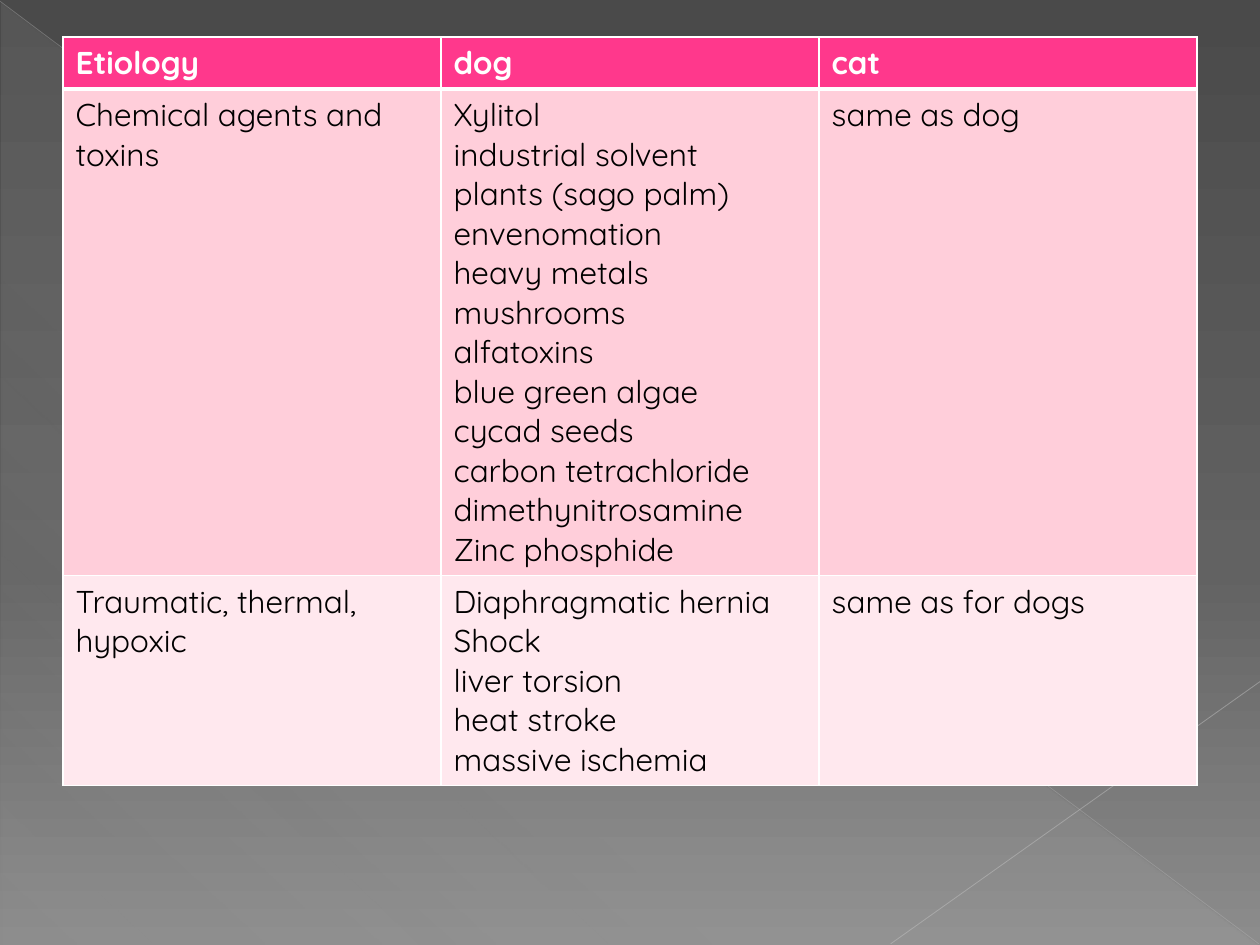
from lxml import etree
from pptx import Presentation
from pptx.dml.color import RGBColor
from pptx.enum.shapes import MSO_CONNECTOR, MSO_SHAPE
from pptx.oxml.ns import qn
from pptx.util import Pt

RIGHT_TRIANGLE = MSO_SHAPE.RIGHT_TRIANGLE
STRAIGHT = MSO_CONNECTOR.STRAIGHT

# Content: each cell is a list of paragraphs
ETIOLOGIES = [
    [["Etiology"], ["dog"], ["cat"]],
    [
        ["Chemical agents and toxins"],
        ["Xylitol", "industrial solvent", "plants (sago palm)", "envenomation",
         "heavy metals", "mushrooms", "alfatoxins", "blue green algae",
         "cycad seeds", "carbon tetrachloride", "dimethynitrosamine",
         "Zinc phosphide"],
        ["same as dog"],
    ],
    [
        ["Traumatic, thermal, hypoxic"],
        ["Diaphragmatic hernia", "Shock", "liver torsion", "heat stroke",
         "massive ischemia"],
        ["same as for dogs"],
    ],
]

COLORS = {
    "header": "FF388C", "band dark": "FFCEDA", "band light": "FFE8EE",
    "border": "FFFFFF", "header text": "FFFFFF", "body text": "000000",
}
ROW_FILLS = ["header", "band dark", "band light"]

# Gradient stops: position %, colour, opacity %
BACKDROP = [(0, "4A4A4A", 100), (60, "626262", 100), (100, "8C8C8C", 100)]
SHEEN = [(0, "D2D2D2", 10), (70, "D2D2D2", 8), (100, "D2D2D2", 1)]

# Decorative lines: start, end, colour, width, opacity %
RAYS = [
    ((0, 0.7), (719.3, 539.3), "BFBFBF", 0.39, 35),
    ((720, 389.5), (509, 539.3), "C6C6C6", 0.47, 45),
]

TABLE_LEFT, TABLE_TOP, TABLE_HEIGHT = 36, 21, 411
COLUMN_WIDTH, MIN_ROW_HEIGHT = 216, 29.2


def add_color(parent, color, opacity=100):
    srgb = etree.SubElement(parent, qn("a:srgbClr"), val=color)
    if opacity < 100:
        etree.SubElement(srgb, qn("a:alpha"), val=str(opacity * 1000))


def set_gradient(fill, owner, stops, angle):
    fill.gradient()
    gradient = next(owner.iter(qn("a:gradFill")))
    for part in list(gradient):
        gradient.remove(part)
    stop_list = etree.SubElement(gradient, qn("a:gsLst"))
    for position, color, opacity in stops:
        stop = etree.SubElement(stop_list, qn("a:gs"), pos=str(position * 1000))
        add_color(stop, color, opacity)
    etree.SubElement(gradient, qn("a:lin"), ang=str(angle * 60000), scaled="0")


def set_borders(cell, widths):
    properties = cell._tc.get_or_add_tcPr()
    for index, (side, width) in enumerate(widths.items()):
        border = etree.Element(qn(f"a:ln{side}"), w=str(Pt(width)))
        add_color(etree.SubElement(border, qn("a:solidFill")), COLORS["border"])
        properties.insert(index, border)


def fill_cell(cell, paragraphs, row):
    cell.fill.solid()
    cell.fill.fore_color.rgb = RGBColor.from_string(COLORS[ROW_FILLS[row]])
    set_borders(cell, {"L": 1, "R": 1, "T": 3 if row == 1 else 1,
                       "B": 3 if row == 0 else 1})
    cell.text = "\n".join(paragraphs)
    text_color = COLORS["header text" if row == 0 else "body text"]
    text_format = {"name": "Quicksand", "size": Pt(18), "bold": row == 0}
    for paragraph in cell.text_frame.paragraphs:
        for run in paragraph.runs:
            for attribute, value in text_format.items():
                setattr(run.font, attribute, value)
            run.font.color.rgb = RGBColor.from_string(text_color)


def main():
    deck = Presentation()
    deck.slide_width, deck.slide_height = Pt(720), Pt(540)
    slide = deck.slides.add_slide(deck.slide_layouts[6])

    # Background with a faint triangle and two thin rays
    set_gradient(slide.background.fill, slide.element, BACKDROP, 90)
    sheen = slide.shapes.add_shape(
        RIGHT_TRIANGLE, Pt(0.7), Pt(1.4), Pt(718.6), Pt(538.6))
    sheen.shadow.inherit = False
    sheen.line.fill.background()
    set_gradient(sheen.fill, sheen.element, SHEEN, 133)

    for start, end, color, width, opacity in RAYS:
        ray = slide.shapes.add_connector(
            STRAIGHT, *(Pt(value) for value in start + end))
        ray.line.width = Pt(width)
        ray.line.color.rgb = RGBColor.from_string(color)
        srgb = next(ray.element.spPr.iter(qn("a:srgbClr")))
        etree.SubElement(srgb, qn("a:alpha"), val=str(opacity * 1000))
        etree.SubElement(ray.element.spPr, qn("a:effectLst"))

    # Etiology table: rows grow with their text
    columns = len(ETIOLOGIES[0])
    frame = slide.shapes.add_table(
        len(ETIOLOGIES), columns, Pt(TABLE_LEFT), Pt(TABLE_TOP),
        Pt(columns * COLUMN_WIDTH), Pt(TABLE_HEIGHT))
    for row, cells in enumerate(ETIOLOGIES):
        frame.table.rows[row].height = Pt(MIN_ROW_HEIGHT)
        for column, paragraphs in enumerate(cells):
            fill_cell(frame.table.cell(row, column), paragraphs, row)
    frame.height = Pt(TABLE_HEIGHT)

    deck.save("out.pptx")


if __name__ == "__main__":
    main()
